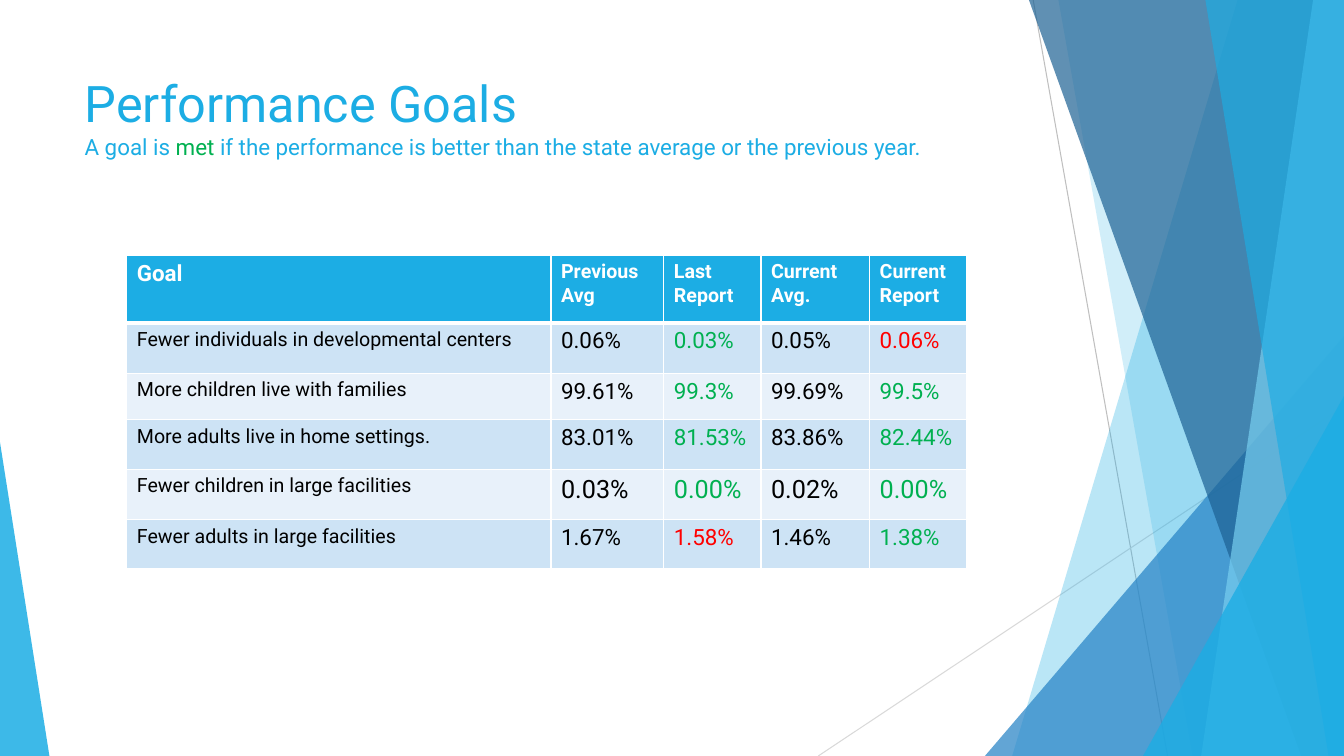
from lxml import etree
from pptx import Presentation
from pptx import util as u
from pptx.dml.color import RGBColor
from pptx.enum import shapes, text
from pptx.oxml import ns

WHITE = RGBColor(0xFF, 0xFF, 0xFF)
BLACK = RGBColor(0, 0, 0)
GREEN = RGBColor(0x00, 0xB0, 0x50)
RED = RGBColor(0xFF, 0, 0)
SKY = RGBColor(0x1C, 0xAD, 0xE4)
BLUE = RGBColor(0x26, 0x83, 0xC6)
NAVY = RGBColor(0x1D, 0x62, 0x94)
AQUA = RGBColor(0x77, 0xCE, 0xEF)
DARK_BAND = RGBColor(0xCD, 0xE3, 0xF5)
LIGHT_BAND = RGBColor(0xE8, 0xF1, 0xFA)
GREY = RGBColor(0xBF, 0xBF, 0xBF)
PALE_GREY = RGBColor(0xD9, 0xD9, 0xD9)
WIDTH, HEIGHT = 960, 540


def write(para, words, size=16, colour=BLACK, bold=False):
    span = para.add_run()
    span.text = words
    span.font.name = "Roboto"
    span.font.size = u.Pt(size)
    span.font.color.rgb = colour
    span.font.bold = bold


def add_border(cell, position, side, weight):
    line = etree.Element(ns.qn(f"a:{side}"), w=str(u.Pt(weight)))
    fill = etree.SubElement(line, ns.qn("a:solidFill"))
    etree.SubElement(fill, ns.qn("a:srgbClr"), val=str(WHITE))
    cell._tc.get_or_add_tcPr().insert(position, line)


deck = Presentation()
deck.slide_width, deck.slide_height = u.Pt(WIDTH), u.Pt(HEIGHT)
page = deck.slides.add_slide(deck.slide_layouts[5])

rays = [
    (738, 0, 834, HEIGHT, GREY),
    (WIDTH, 290, 584.5, HEIGHT, PALE_GREY),
]
for x1, y1, x2, y2, colour in rays:
    ray = page.shapes.add_connector(
        shapes.MSO_CONNECTOR.STRAIGHT, u.Pt(x1), u.Pt(y1), u.Pt(x2), u.Pt(y2))
    ray.line.color.rgb = colour
    ray.line.width = u.Pt(0.75)
    etree.SubElement(ray.element.spPr, ns.qn("a:effectLst"))

facets = [
    (884, 0, 723, SKY, 30),
    (756, 0, 852, SKY, 20),
    (WIDTH, 240, 703.5, BLUE, 72),
    (735, 0, 929.5, NAVY, 70),
    (938, 0, 858, AQUA, 70),
    (861, 0, 949, SKY, 65),
    (WIDTH, 283, 816.5, SKY, 80),
    (0, 316, 35.3, SKY, 85),
]
for top_x, top_y, foot_x, colour, opacity in facets:
    if top_y:
        facet = page.shapes.add_shape(
            shapes.MSO_SHAPE.ISOSCELES_TRIANGLE, u.Pt(min(top_x, foot_x)),
            u.Pt(top_y), u.Pt(abs(top_x - foot_x)), u.Pt(HEIGHT - top_y))
        facet.adjustments[0] = 1 if top_x > foot_x else 0
    else:
        outline = page.shapes.build_freeform(u.Pt(top_x), 0)
        corners = [(WIDTH, 0), (WIDTH, HEIGHT), (foot_x, HEIGHT)]
        outline.add_line_segments([(u.Pt(x), u.Pt(y)) for x, y in corners])
        facet = outline.convert_to_shape()
    facet.shadow.inherit = False
    facet.line.fill.background()
    facet.fill.solid()
    facet.fill.fore_color.rgb = colour
    tint = facet.element.spPr.xpath("./a:solidFill/a:srgbClr")[0]
    etree.SubElement(tint, ns.qn("a:alpha"), val=str(opacity * 1000))

title = page.shapes.title
title.element.getparent().append(title.element)
title.left, title.top = u.Pt(53.3), u.Pt(48)
title.width, title.height = u.Pt(677), u.Pt(80)
frame = title.text_frame
frame.word_wrap = True
frame.auto_size = text.MSO_AUTO_SIZE.NONE
frame.vertical_anchor = text.MSO_ANCHOR.TOP
para = frame.paragraphs[0]
para.alignment = text.PP_ALIGN.LEFT
write(para, "Performance Goals", size=36, colour=SKY)
para.add_line_break()
write(para, "A goal is ", colour=SKY)
write(para, "met", colour=GREEN)
write(para, " if the performance is better than the state average or the previous year.", colour=SKY)

goals = [
    ("Goal", "Previous Avg", "Last Report", "Current Avg.", "Current Report"),
    ("Fewer individuals in developmental centers", "0.06%", "0.03%", "0.05%", "0.06%"),
    ("More children live with families", "99.61%", "99.3%", "99.69%", "99.5%"),
    ("More adults live in home settings.", "83.01%", "81.53%", "83.86%", "82.44%"),
    ("Fewer children in large facilities", "0.03%", "0.00%", "0.02%", "0.00%"),
    ("Fewer adults in large facilities", "1.67%", "1.58%", "1.46%", "1.38%"),
]
missed = {(1, 4), (5, 2)}
report_columns = (2, 4)
large_row = 4
column_widths = [303, 80.6, 69.4, 77.6, 69.4]
row_heights = [48.2, 36.2, 33, 35.6, 35.8, 35.2]

table = page.shapes.add_table(
    len(goals), len(column_widths), u.Pt(90.6), u.Pt(182.5),
    u.Pt(sum(column_widths)), u.Pt(sum(row_heights))).table
for column, width in zip(table.columns, column_widths):
    column.width = u.Pt(width)
for row, height in zip(table.rows, row_heights):
    row.height = u.Pt(height)

for r, goal in enumerate(goals):
    for c, words in enumerate(goal):
        cell = table.cell(r, c)
        para = cell.text_frame.paragraphs[0]
        cell.fill.solid()
        if r == 0:
            cell.fill.fore_color.rgb = SKY
            write(para, words, size=14 if c else 16, colour=WHITE, bold=True)
        else:
            cell.fill.fore_color.rgb = DARK_BAND if r % 2 else LIGHT_BAND
            colour = BLACK
            if c in report_columns:
                colour = RED if (r, c) in missed else GREEN
            value_size = 18 if r == large_row else 16
            write(para, words, size=value_size if c else 14, colour=colour)
        weights = {"lnL": 1, "lnR": 1, "lnT": 3 if r == 1 else 1, "lnB": 1 if r else 3}
        for position, (side, weight) in enumerate(weights.items()):
            add_border(cell, position, side, weight)

deck.save("out.pptx")
